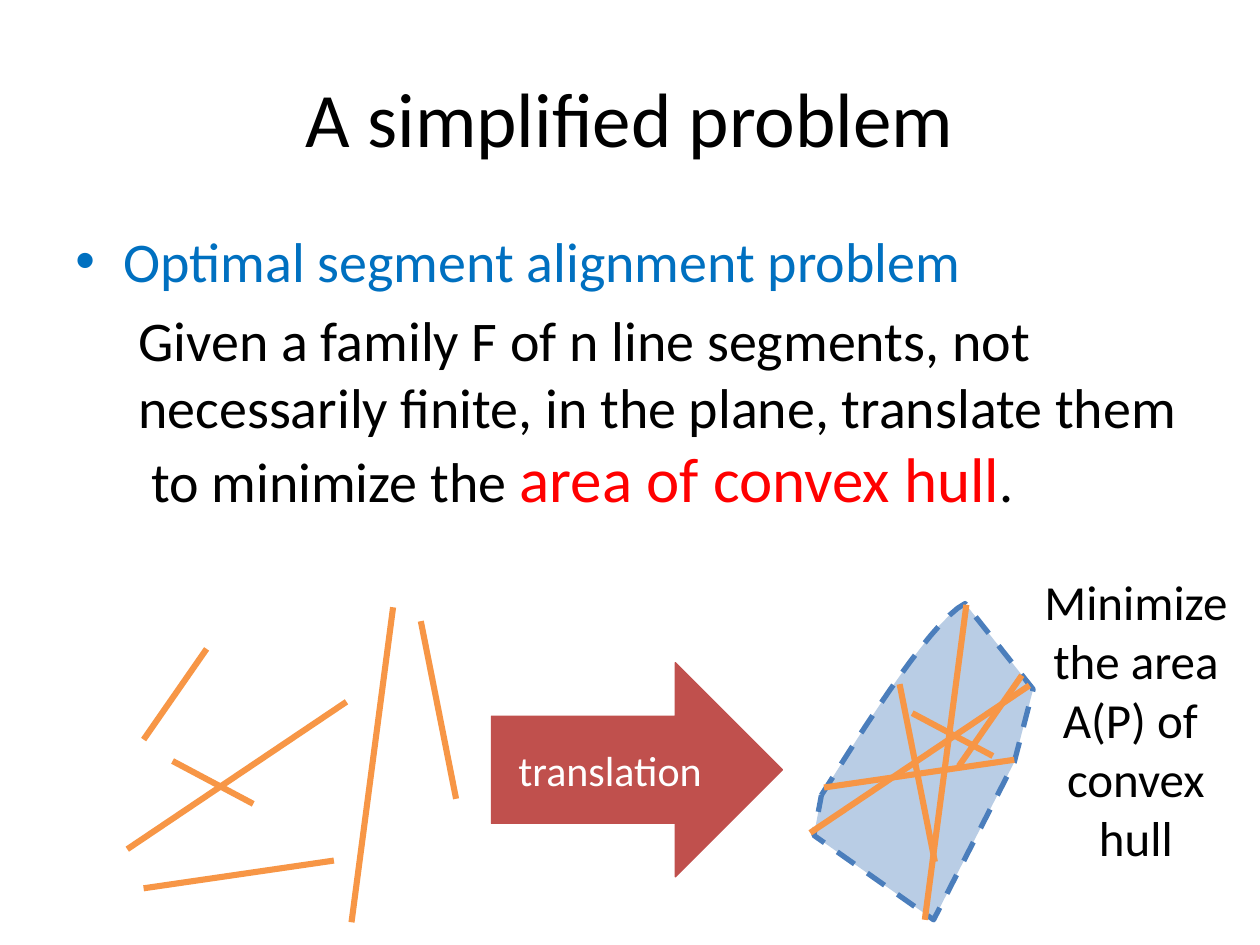
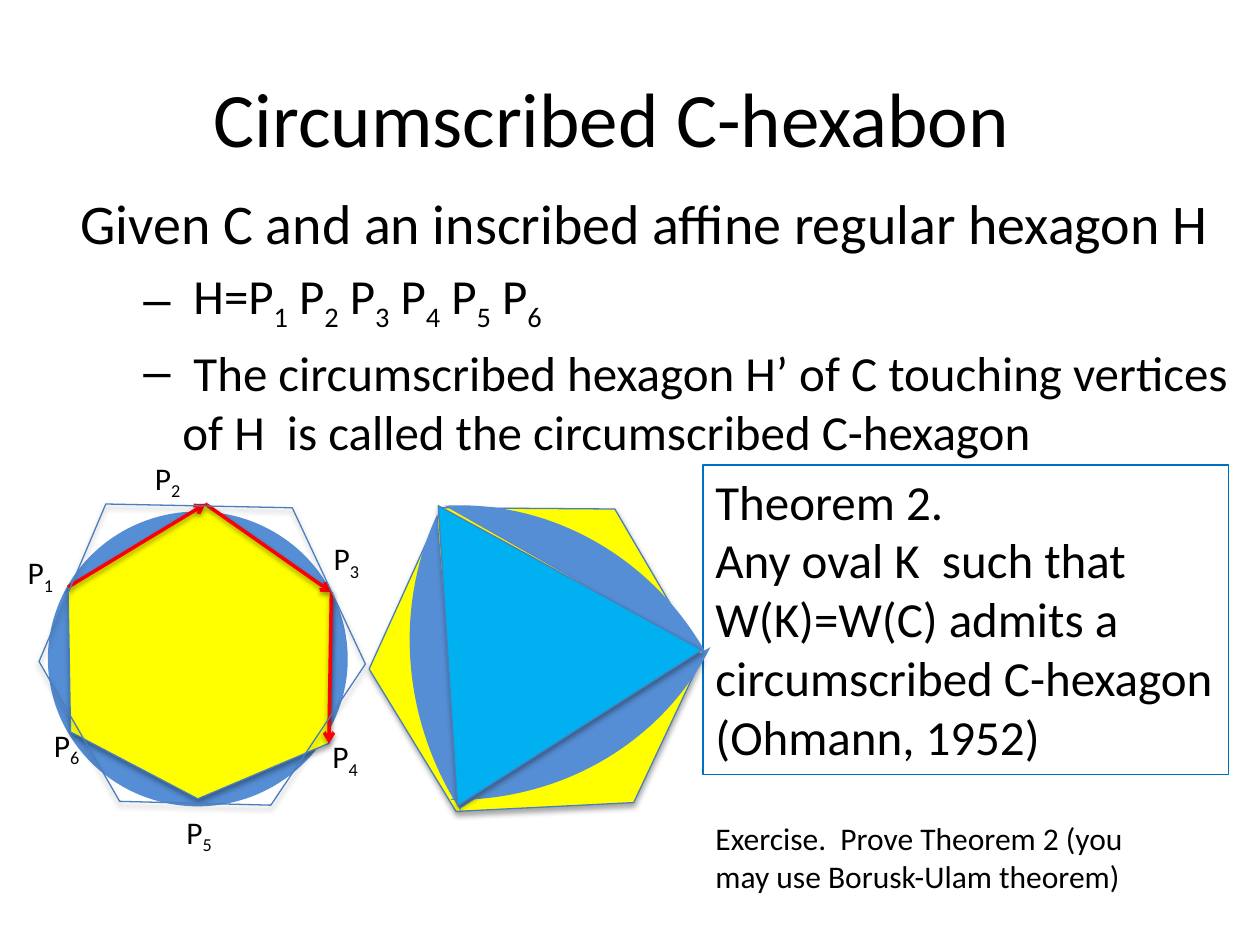
"""Build two slides on segment alignment and circumscribed hexagons."""
from dataclasses import dataclass
from itertools import pairwise

from lxml.etree import SubElement
from pptx import Presentation
from pptx.dml.color import RGBColor
from pptx.enum.dml import MSO_LINE
from pptx.enum.shapes import MSO_CONNECTOR, MSO_SHAPE
from pptx.enum.text import MSO_ANCHOR, PP_ALIGN
from pptx.oxml.ns import qn
from pptx.util import Pt

PX = 9144


@dataclass(frozen=True)
class Theme:
    font: str = "Calibri"
    black: str = "000000"
    white: str = "FFFFFF"
    blue: str = "0070C0"
    red: str = "FF0000"
    brick: str = "C0504D"
    orange: str = "F79646"
    pale: str = "B9CDE5"
    edge: str = "4B7EBC"
    oval: str = "558ED5"
    sky: str = "00B0F0"
    yellow: str = "FFFF00"
    title: int = 44
    large: int = 36
    body: int = 32
    text: int = 28
    label: int = 24
    small: int = 18
    thin: float = 0.75


def apply(item, **fmt):
    for name, value in fmt.items():
        setattr(item, name, value)


def curve(a, b, c, d, steps=16):
    points = []
    for i in range(steps + 1):
        t = i / steps
        u = 1 - t
        mix = u**3, 3 * u * u * t, 3 * u * t * t, t**3
        points.append(tuple(sum(m * p for m, p in zip(mix, axis)) for axis in zip(a, b, c, d)))
    return points


class Deck:
    def __init__(self, theme):
        self.theme = theme
        self.show = Presentation()
        apply(self.show, slide_width=1000 * PX, slide_height=750 * PX)

    def page(self):
        self.slide = self.show.slides.add_slide(self.show.slide_layouts[6])
        self.shapes = self.slide.shapes

    def paint(self, shape, fill=None, line=None, width=None):
        if fill:
            shape.fill.solid()
            shape.fill.fore_color.rgb = RGBColor.from_string(fill)
        else:
            shape.fill.background()
        if line:
            self.stroke(shape.line, line, width or self.theme.thin)
        else:
            shape.line.fill.background()

    def stroke(self, line, color, width):
        line.color.rgb = RGBColor.from_string(color)
        line.width = Pt(width)

    def shade(self, shape, alpha=None, dist=1.8):
        props = shape._element.spPr
        effects = props.find(qn("a:effectLst"))
        if effects is None:
            effects = SubElement(props, qn("a:effectLst"))
        if alpha:
            cast = SubElement(effects, qn("a:outerShdw"), blurRad=str(Pt(3.1)),
                              dist=str(Pt(dist)), dir="5400000", rotWithShape="0")
            color = SubElement(cast, qn("a:srgbClr"), val=self.theme.black)
            SubElement(color, qn("a:alpha"), val=str(alpha * 1000))

    def fill_para(self, para, text, size, color=None):
        for i, part in enumerate(text.split("_")):
            if not part:
                continue
            run = para.add_run()
            run.text = part
            apply(run.font, name=self.theme.font, size=Pt(size))
            run.font.color.rgb = RGBColor.from_string(color or self.theme.black)
            if i % 2:
                run._r.get_or_add_rPr().set("baseline", "-25000")

    def box(self, x, y, w, h, lines=(), size=None, align=PP_ALIGN.LEFT, **frame):
        shape = self.shapes.add_textbox(x * PX, y * PX, w * PX, h * PX)
        apply(shape.text_frame, **{"word_wrap": True, **frame})
        for i, line in enumerate(lines):
            para = self.para(shape, i)
            para.alignment = align
            self.fill_para(para, line, size)
        return shape

    def para(self, shape, index):
        frame = shape.text_frame
        return frame.add_paragraph() if index else frame.paragraphs[0]

    def title(self, x, w, text):
        self.box(x, 30, w, 125, [text], self.theme.title, PP_ALIGN.CENTER,
                 vertical_anchor=MSO_ANCHOR.MIDDLE)

    def body(self, place, items):
        shape = self.box(*place)
        for i, (left, first, mark, runs) in enumerate(items):
            para = self.para(shape, i)
            para.space_before = Pt(runs[0][1] * 0.2)
            props = para._p.get_or_add_pPr()
            props.set("marL", str(left * PX))
            props.set("indent", str(first * PX))
            if mark:
                SubElement(props, qn("a:buFont"), typeface="Arial")
                SubElement(props, qn("a:buChar"), char=mark)
            for run in runs:
                self.fill_para(para, *run)

    def form(self, kind, x, y, w, h, fill, line=None, turn=0, adjust=()):
        shape = self.shapes.add_shape(kind, x * PX, y * PX, w * PX, h * PX)
        shape.shadow.inherit = False
        shape.rotation = turn
        for i, value in enumerate(adjust):
            shape.adjustments[i] = value
        self.paint(shape, fill, line)
        return shape

    def outline(self, points, fill=None, width=None):
        (x, y), *rest = [(px * PX, py * PX) for px, py in points]
        pen = self.shapes.build_freeform(x, y)
        pen.add_line_segments(rest, close=True)
        shape = pen.convert_to_shape()
        shape.shadow.inherit = False
        self.paint(shape, fill, self.theme.edge, width)
        return shape

    def line(self, start, end, color, width):
        link = self.shapes.add_connector(
            MSO_CONNECTOR.STRAIGHT, *(v * PX for v in (*start, *end)))
        self.stroke(link.line, color, width)
        return link

    def arrow(self, start, end):
        link = self.line(start, end, self.theme.red, 2)
        SubElement(link._element.spPr.find(qn("a:ln")), qn("a:tailEnd"), type="arrow")
        self.shade(link, 38, 1.6)


def problem(deck):
    look = deck.theme
    deck.page()
    hull = deck.outline(
        curve((652, 631), (672, 600), (737, 493), (766, 479))
        + [(820, 547), (805, 605), (741, 730), (646, 663)], look.pale, 3)
    hull.line.dash_style = MSO_LINE.DASH
    deck.title(50, 900, "A simplified problem")
    deck.body((50, 175, 900, 495), [
        (38, -38, "•", [("Optimal segment alignment problem", look.body, look.blue)]),
        (50, 0, None, [
            ("Given a family F of n line segments, not necessarily finite, in the plane, "
             "translate them  to minimize the ", look.body),
            ("area of convex hull", look.large, look.red),
            (".", look.body)]),
    ])
    family = [
        ((265, 683), (114, 705), (540, -80)),
        ((312, 482), (279, 732), (455, -2)),
        ((275, 557), (101, 674), (542, -13)),
        ((334, 493), (362, 634), (380, 50)),
        ((201, 638), (137, 604), (587, -38)),
        ((164, 515), (114, 587), (647, 21)),
    ]
    for moved in (0, 1):
        for start, end, (dx, dy) in family:
            ends = [(x + moved * dx, y + moved * dy) for x, y in (start, end)]
            deck.shade(deck.line(*ends, look.orange, 3.5))
    arrow = deck.form(MSO_SHAPE.RIGHT_ARROW, 390, 526, 231, 170, look.brick, look.brick)
    arrow.text_frame.vertical_anchor = MSO_ANCHOR.MIDDLE
    para = deck.para(arrow, 0)
    para.alignment = PP_ALIGN.CENTER
    deck.fill_para(para, "translation", look.label, look.white)
    deck.box(811, 449, 181, 246, ["Minimize the area A(P) of  convex hull"],
             look.text, PP_ALIGN.CENTER)


def hexagon(deck):
    look = deck.theme
    deck.page()
    deck.title(0, 985, "Circumscribed C-hexabon ")
    deck.body((54, 145, 933, 557), [
        (0, 0, None, [("Given C and an inscribed affine regular hexagon H", look.body)]),
        (81, -31, "–", [(" H=P_1_ P_2_ P_3_ P_4_ P_5_ P_6_", look.text)]),
        (81, -31, "–", [(" The circumscribed hexagon H’ of C touching vertices of H  "
                         "is called the circumscribed C-hexagon", look.text)]),
    ])

    deck.form(MSO_SHAPE.OVAL, 38, 406, 238, 234, look.oval)
    tips = [(54, 466), (163, 400), (263, 470), (261, 590)]
    side = curve(tips[2], (263, 516), (261, 544), tips[3])
    inner = deck.outline(tips[:2] + side + [(157, 634), (56, 581)], look.yellow)
    deck.shade(inner, 35)
    for start, end in pairwise(tips):
        deck.arrow(start, end)
    spots = [(12, 434), (113, 359), (255, 423), (254, 580), (138, 640), (33, 571)]
    for i, (x, y) in enumerate(spots, 1):
        deck.box(x, y, 42, 40, [f"P_{i}_"], look.small, word_wrap=False)
    outer = deck.outline([(84, 400), (232, 403), (290, 527), (215, 639), (95, 636), (31, 525)])
    deck.shade(outer, 35)

    theorem = deck.box(558, 369, 417, 246, [
        "Theorem 2.",
        "Any oval K  such that W(K)=W(C) admits a circumscribed C-hexagon",
        "(Ohmann, 1952)"], look.text)
    deck.paint(theorem, line=look.blue)

    frame = deck.outline([(293, 531), (351, 403), (488, 404), (557, 522), (503, 637), (362, 644)],
                         look.yellow)
    deck.shade(frame, 35)
    tilt = 327.5
    deck.form(MSO_SHAPE.ISOSCELES_TRIANGLE, 291, 389, 228, 208, look.oval, turn=tilt)
    arcs = [(125, 414, 481, 455, 87.5), (329, 279, 455, 481, tilt), (109, 177, 481, 455, 207.5)]
    for *place, turn in arcs:
        deck.form(MSO_SHAPE.CHORD, *place, look.oval, turn=turn, adjust=(107.67, 144.31))
    core = deck.form(MSO_SHAPE.ISOSCELES_TRIANGLE, 289, 385, 230, 209, look.sky, look.edge, tilt)
    deck.shade(core, 35)
    deck.box(558, 645, 389, 71,
             ["Exercise.  Prove Theorem 2 (you may use Borusk-Ulam theorem)"], look.small)


def main():
    deck = Deck(Theme())
    problem(deck)
    hexagon(deck)
    deck.show.save("out.pptx")


if __name__ == "__main__":
    main()
